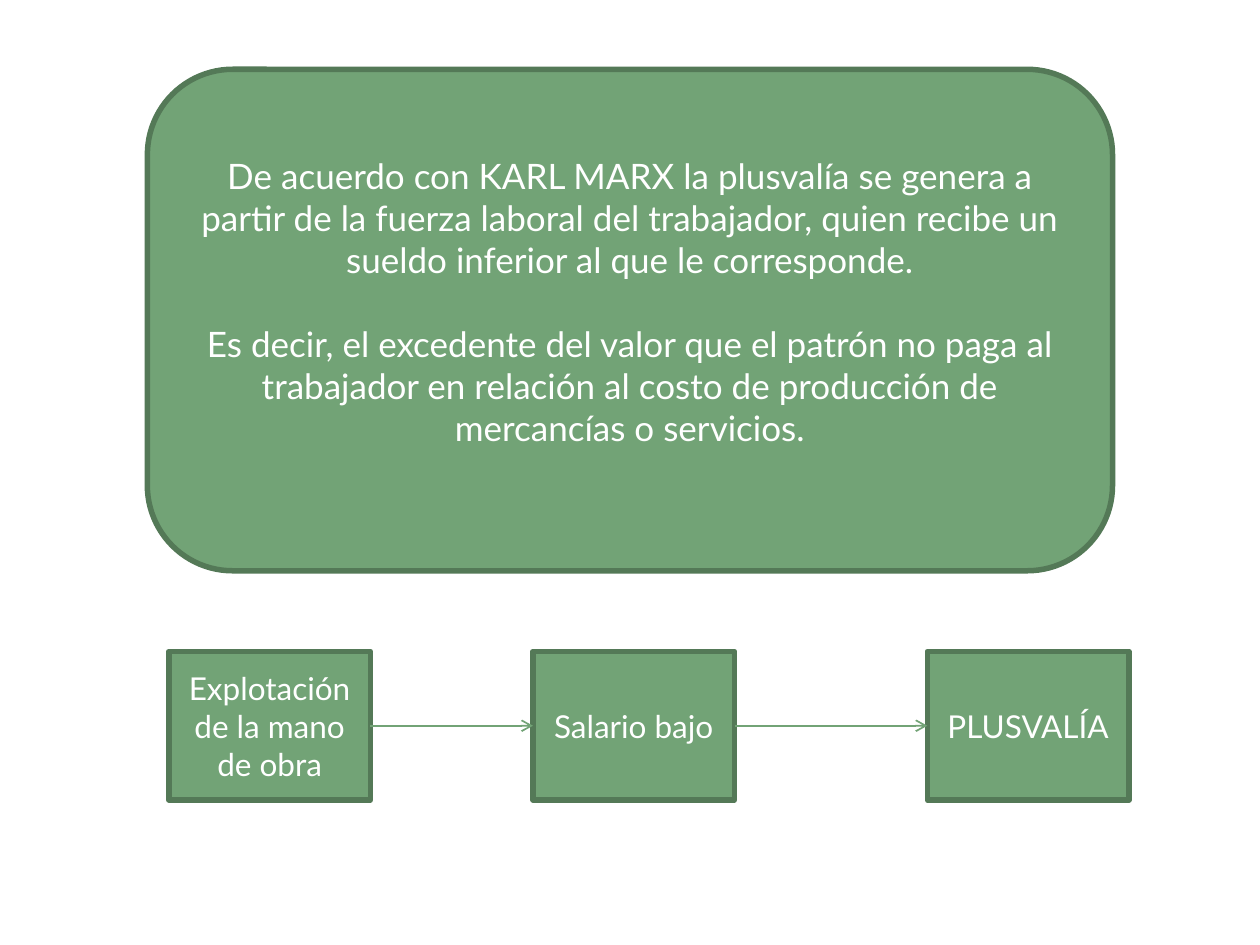
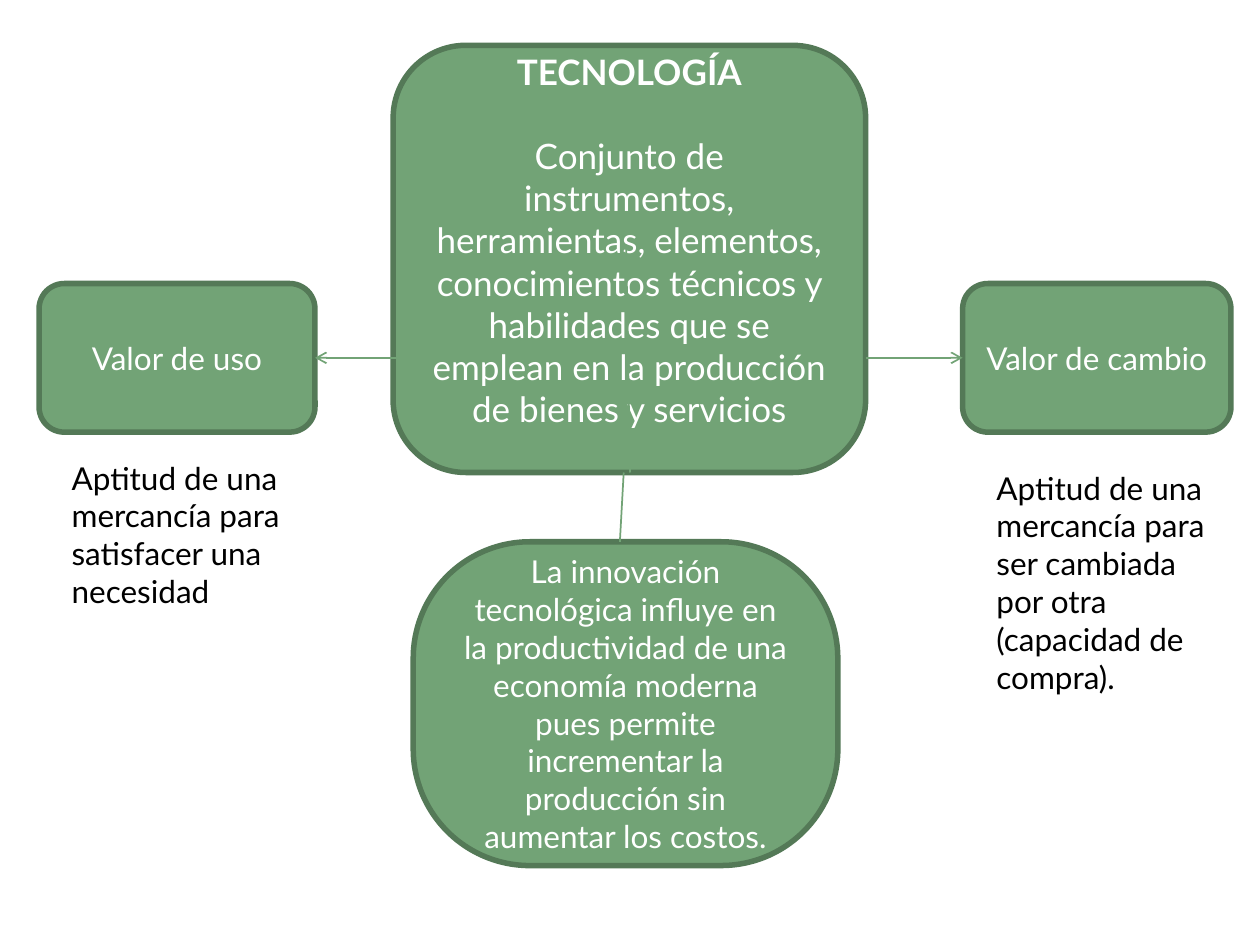
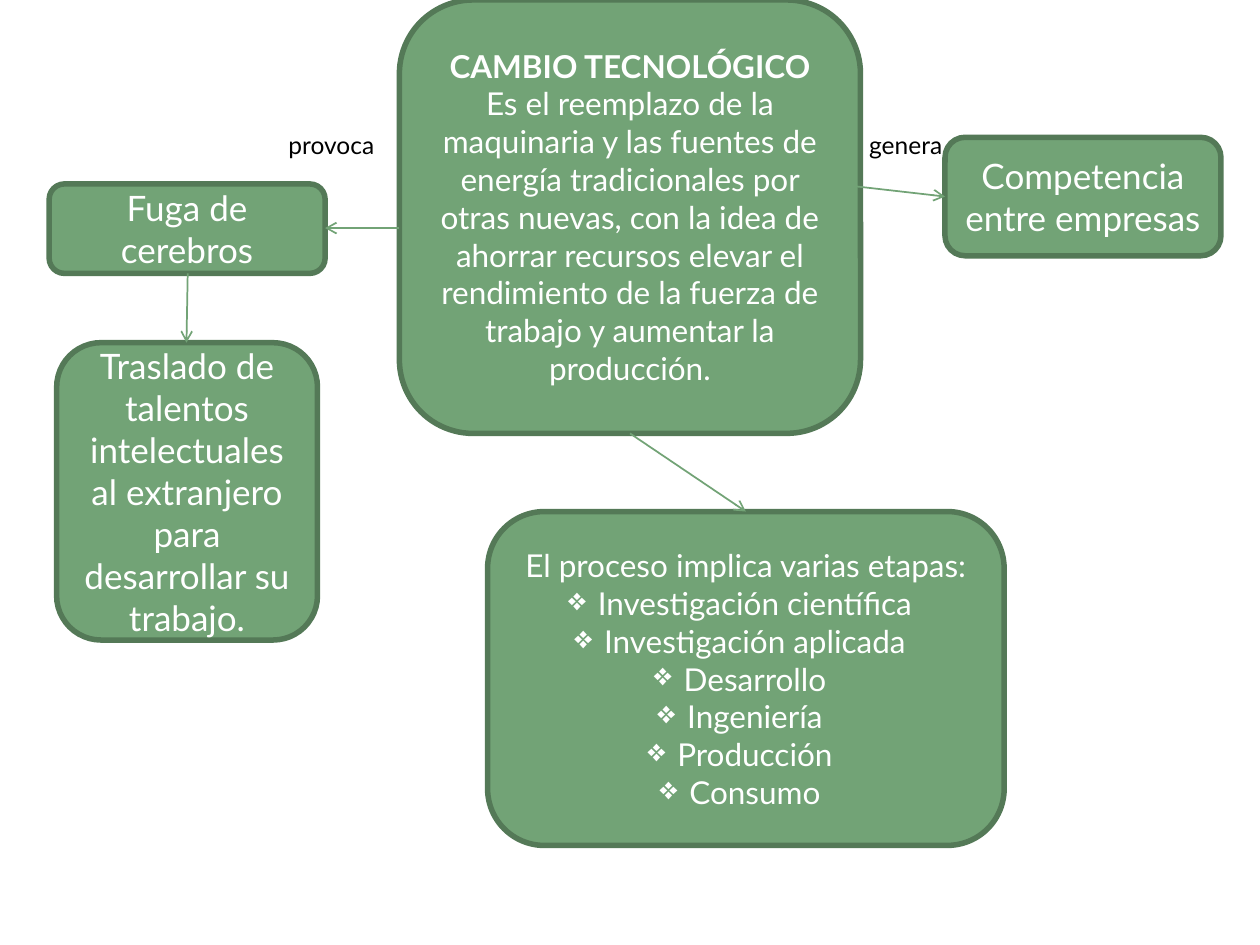
"""Build three concept-map slides about surplus value and technology."""
from dataclasses import dataclass

from lxml import etree
from pptx import Presentation
from pptx.dml.color import RGBColor
from pptx.enum.shapes import MSO_CONNECTOR, MSO_SHAPE
from pptx.enum.text import MSO_ANCHOR, MSO_AUTO_SIZE, PP_ALIGN
from pptx.oxml.ns import qn
from pptx.slide import Slide
from pptx.text.text import TextFrame
from pptx.util import Inches, Pt

RECT = MSO_SHAPE.RECTANGLE
ROUNDED = MSO_SHAPE.ROUNDED_RECTANGLE
STRAIGHT = MSO_CONNECTOR.STRAIGHT
MIDDLE = MSO_ANCHOR.MIDDLE
GROW = MSO_AUTO_SIZE.SHAPE_TO_FIT_TEXT
CENTER = PP_ALIGN.CENTER
LEFT = PP_ALIGN.LEFT

FONT = "Lato"
BLANK_LAYOUT = 6
COLORS = {"fill": "72A376", "border": "547957", "light": "FFFFFF", "dark": "000000"}


@dataclass(frozen=True)
class Line:
    """One paragraph of text."""
    text: str
    bold: bool = False
    bullet: str = ""
    before: float = 0


@dataclass(frozen=True)
class Box:
    """A filled concept box; place is left, top, width, height in inches."""
    place: tuple[float, float, float, float]
    lines: tuple[Line, ...]
    size: int = 18
    kind: MSO_SHAPE = ROUNDED
    corner: float = 0.17
    bottom: float = 0.05


@dataclass(frozen=True)
class Note:
    """Plain dark text beside the boxes."""
    place: tuple[float, float, float, float]
    text: str
    size: int = 18
    spacing: float = 1.0


@dataclass(frozen=True)
class Link:
    """A line between two points in inches."""
    start: tuple[float, float]
    end: tuple[float, float]
    arrow: bool = True


Item = Box | Note | Link


def write_lines(frame: TextFrame, lines: tuple[Line, ...], size: int, color: str,
                layout: dict) -> None:
    """Fill a text frame with formatted paragraphs."""
    frame.word_wrap = True
    for index, line in enumerate(lines):
        para = frame.add_paragraph() if index else frame.paragraphs[0]
        if line.bullet:
            mark = etree.SubElement(para._p.get_or_add_pPr(), qn("a:buChar"))
            mark.set("char", line.bullet)
        for name, value in layout.items():
            setattr(para, name, value)
        if line.before:
            para.space_before = Pt(line.before)
        span = para.add_run()
        span.text = line.text
        for name, value in {"name": FONT, "size": Pt(size), "bold": line.bold}.items():
            setattr(span.font, name, value)
        span.font.color.rgb = RGBColor.from_string(COLORS[color])


def draw_box(page: Slide, box: Box) -> None:
    """Draw a concept box with centred text."""
    shape = page.shapes.add_shape(box.kind, *map(Inches, box.place))
    shape.shadow.inherit = False
    if box.kind == ROUNDED:
        shape.adjustments[0] = box.corner
    shape.fill.solid()
    shape.fill.fore_color.rgb = RGBColor.from_string(COLORS["fill"])
    shape.line.color.rgb = RGBColor.from_string(COLORS["border"])
    shape.line.width = Pt(3.15)
    frame = shape.text_frame
    frame.vertical_anchor = MIDDLE
    frame.margin_bottom = Inches(box.bottom)
    write_lines(frame, box.lines, box.size, "light", {"alignment": CENTER})


def draw_note(page: Slide, note: Note) -> None:
    """Draw a text box that grows with its text."""
    frame = page.shapes.add_textbox(*map(Inches, note.place)).text_frame
    frame.auto_size = GROW
    layout = {"alignment": LEFT, "line_spacing": note.spacing}
    write_lines(frame, (Line(note.text),), note.size, "dark", layout)


def draw_link(page: Slide, link: Link) -> None:
    """Draw a thin line, with an arrowhead at its end if asked."""
    ends = map(Inches, link.start + link.end)
    connector = page.shapes.add_connector(STRAIGHT, *ends)
    connector.line.color.rgb = RGBColor.from_string(COLORS["fill"])
    connector.line.width = Pt(1)
    if link.arrow:
        tail = etree.SubElement(connector.line._get_or_add_ln(), qn("a:tailEnd"))
        tail.set("type", "arrow")
    etree.SubElement(connector._element.spPr, qn("a:effectLst"))


def surplus_value() -> list[Item]:
    """Describe the slide on surplus value."""
    definition = Box((1.17, 0.55, 7.66, 3.98), (
        Line("De acuerdo con KARL MARX la plusvalía se genera a partir de la fuerza "
             "laboral del trabajador, quien recibe un sueldo inferior al que le "
             "corresponde."),
        Line("Es decir, el excedente del valor que el patrón no paga al trabajador en "
             "relación al costo de producción de mercancías o servicios.", before=24),
    ), size=20, bottom=0.35)
    steps = {1.34: "Explotación de la mano de obra", 4.23: "Salario bajo",
             7.36: "PLUSVALÍA"}
    width, middle = 1.6, 5.76
    boxes = [Box((left, 5.17, width, 1.18), (Line(text),), kind=RECT)
             for left, text in steps.items()]
    lefts = list(steps)
    links = [Link((left + width, middle), (following, middle))
             for left, following in zip(lefts, lefts[1:])]
    return [definition, *boxes, *links]


def technology() -> list[Item]:
    """Describe the slide on technology and its two values."""
    return [
        Box((3.12, 0.36, 3.75, 3.39), (
            Line("TECNOLOGÍA", bold=True),
            Line("Conjunto de instrumentos, herramientas, elementos, conocimientos "
                 "técnicos y habilidades que se emplean en la producción de bienes y "
                 "servicios", before=24),
        ), size=20, bottom=0.35),
        Box((3.28, 4.3, 3.37, 2.57), (
            Line("La innovación tecnológica influye en la productividad de una economía "
                 "moderna pues permite incrementar la producción sin aumentar los "
                 "costos."),
        ), corner=0.36),
        Box((0.31, 2.25, 2.19, 1.18), (Line("Valor de uso"),)),
        Box((7.64, 2.25, 2.13, 1.18), (Line("Valor de cambio"),)),
        Link((5, 3.75), (4.97, 1.94), arrow=False),
        Link((4.95, 3.75), (4.92, 4.3), arrow=False),
        Link((3.15, 2.84), (2.5, 2.84)),
        Link((6.87, 2.84), (7.64, 2.84)),
        Note((0.47, 3.59, 1.88, 1.31),
             "Aptitud de una mercancía para satisfacer una necesidad"),
        Note((7.81, 3.67, 1.88, 1.92),
             "Aptitud de una mercancía para ser cambiada por otra (capacidad de "
             "compra)."),
    ]


def technological_change() -> list[Item]:
    """Describe the slide on technological change and its effects."""
    stages = ("Investigación científica", "Investigación aplicada", "Desarrollo",
              "Ingeniería", "Producción", "Consumo")
    return [
        Box((3.17, 0, 3.66, 3.44), (
            Line("CAMBIO TECNOLÓGICO", bold=True),
            Line("Es el reemplazo de la maquinaria y las fuentes de energía "
                 "tradicionales por otras nuevas, con la idea de ahorrar recursos "
                 "elevar el rendimiento de la fuerza de trabajo y aumentar la "
                 "producción."),
        )),
        Box((3.87, 4.06, 4.1, 2.65), (
            Line("El proceso implica varias etapas:"),
            *(Line(stage, bullet="❖") for stage in stages),
        )),
        Link((5, 3.44), (5.92, 4.06)),
        Box((7.5, 1.09, 2.19, 0.94),
            (Line("Competencia"), Line("entre empresas")), size=20),
        Box((0.39, 1.46, 2.19, 0.71), (Line("Fuga de cerebros"),), size=20),
        Link((3.17, 1.81), (2.58, 1.81)),
        Link((6.8, 1.48), (7.5, 1.56)),
        Note((6.8, 1, 0.9, 0.32), "genera", size=14, spacing=0.95),
        Note((2.19, 1, 1.09, 0.32), "provoca", size=14, spacing=0.95),
        Box((0.45, 2.72, 2.07, 2.36), (
            Line("Traslado de talentos intelectuales al extranjero para desarrollar su "
                 "trabajo."),
        ), size=20),
        Link((1.49, 2.17), (1.48, 2.72)),
    ]


def main() -> None:
    """Build and save the deck."""
    deck = Presentation()
    deck.slide_width = Inches(10)
    deck.slide_height = Inches(7.5)
    painters = {Box: draw_box, Note: draw_note, Link: draw_link}
    for items in (surplus_value(), technology(), technological_change()):
        page = deck.slides.add_slide(deck.slide_layouts[BLANK_LAYOUT])
        for item in items:
            painters[type(item)](page, item)
    deck.save("out.pptx")


if __name__ == "__main__":
    main()
